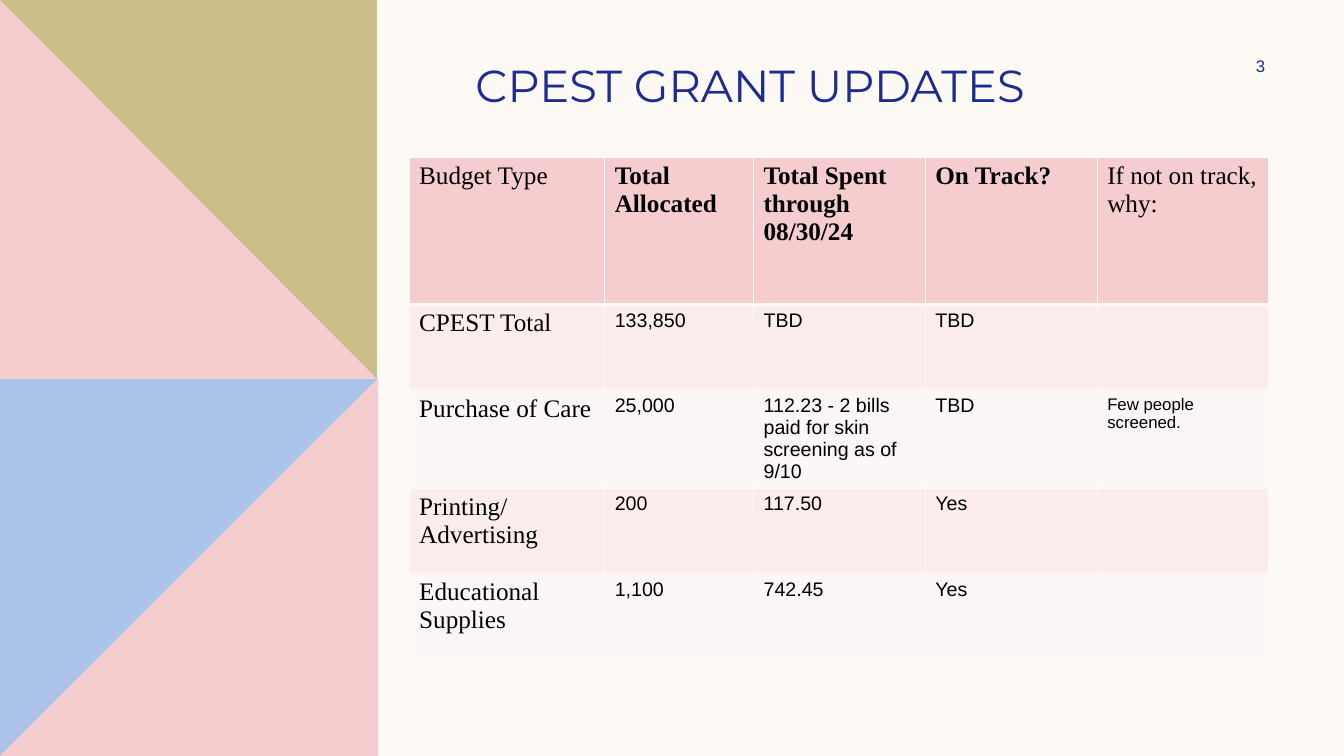
from dataclasses import dataclass

from lxml import etree
from pptx import Presentation
from pptx import util as u
from pptx.dml.color import RGBColor
from pptx.enum import text
from pptx.oxml.ns import qn

CREAM, PINK, OLIVE, BLUE, NAVY = "FDFAF6", "F5CDCE", "CCBE89", "AAC3E8", "1F2C8F"
BANDS = ("FBEDED", "FDF6F6")
SERIF, SANS = "Times New Roman", "Arial"


@dataclass
class Panel:
    colour: str
    points: list[tuple[float, float]]


@dataclass
class Label:
    wording: str
    left: float
    top: float
    width: float
    height: float
    font: str
    size: int
    alignment: text.PP_ALIGN


@dataclass
class CellStyle:
    font: str
    size: int
    bold: bool = False


PANELS = [
    Panel(BLUE, [(0, 9.53), (9.53, 9.53), (9.53, 19.05), (0, 19.05)]),
    Panel(PINK, [(9.53, 9.53), (9.53, 19.05), (0, 19.05)]),
    Panel(OLIVE, [(0, 0), (9.5, 0), (9.5, 9.55), (0, 9.55)]),
    Panel(PINK, [(0, 0), (9.5, 9.55), (0, 9.55)]),
]
LABELS = [
    Label("CPEST GRANT UPDATES", 11.73, 1.27, 19.02, 1.7, "Montserrat", 32, text.PP_ALIGN.LEFT),
    Label("3", 30.4, 1.27, 2.74, 0.76, SANS, 12, text.PP_ALIGN.CENTER),
]
BUDGET = [
    ["Budget Type", "Total Allocated", "Total Spent through 08/30/24", "On Track?",
     "If not on track, why:"],
    ["CPEST Total", "133,850", "TBD", "TBD", ""],
    ["Purchase of Care", "25,000", "112.23 - 2 bills paid for skin screening as of 9/10",
     "TBD", "Few people screened."],
    ["Printing/\nAdvertising", "200", "117.50", "Yes", ""],
    ["Educational Supplies", "1,100", "742.45", "Yes", ""],
]
COLUMN_WIDTHS = [4.93, 3.75, 4.33, 4.33, 4.33]
ROW_HEIGHTS = [3.71, 2.15, 2.15, 2.15, 2.15]


def paint(fill_or_font, colour: str) -> None:
    """Colour a font, or make a fill solid in that colour."""
    if hasattr(fill_or_font, "solid"):
        fill_or_font.solid()
        fill_or_font.fore_color.rgb = RGBColor.from_string(colour)
    else:
        fill_or_font.color.rgb = RGBColor.from_string(colour)


def draw_panel(slide, panel: Panel) -> None:
    start, *others = [(u.Cm(x), u.Cm(y)) for x, y in panel.points]
    builder = slide.shapes.build_freeform(*start)
    builder.add_line_segments(others)
    shape = builder.convert_to_shape()
    shape.shadow.inherit = False
    paint(shape.fill, panel.colour)
    shape.line.fill.background()


def draw_label(slide, label: Label) -> None:
    box = slide.shapes.add_textbox(
        u.Cm(label.left), u.Cm(label.top), u.Cm(label.width), u.Cm(label.height))
    frame = box.text_frame
    frame.word_wrap = True
    frame.vertical_anchor = text.MSO_ANCHOR.MIDDLE
    paragraph = frame.paragraphs[0]
    paragraph.text = label.wording
    paragraph.alignment = label.alignment
    paragraph.font.name, paragraph.font.size = label.font, u.Pt(label.size)
    paint(paragraph.font, NAVY)


def cell_style(row: int, column: int) -> CellStyle:
    if row == 0:
        return CellStyle(SERIF, 18, bold=0 < column < 4)
    if column == 0:
        return CellStyle(SERIF, 18)
    return CellStyle(SANS, 12 if column == 4 else 14)


def add_borders(cell, bottom_width: float) -> None:
    properties = cell._tc.get_or_add_tcPr()
    for side, width in (("L", 1), ("R", 1), ("T", 1), ("B", bottom_width)):
        line = etree.SubElement(properties, qn(f"a:ln{side}"), w=str(u.Pt(width)))
        fill = etree.SubElement(line, qn("a:solidFill"))
        etree.SubElement(fill, qn("a:srgbClr"), val=CREAM)


def draw_budget_table(slide) -> None:
    table = slide.shapes.add_table(
        len(BUDGET), len(COLUMN_WIDTHS), u.Cm(10.31), u.Cm(3.96),
        u.Cm(sum(COLUMN_WIDTHS)), u.Cm(sum(ROW_HEIGHTS))).table
    for column, width in zip(table.columns, COLUMN_WIDTHS):
        column.width = u.Cm(width)
    for table_row, height in zip(table.rows, ROW_HEIGHTS):
        table_row.height = u.Cm(height)
    for row, wordings in enumerate(BUDGET):
        for column, wording in enumerate(wordings):
            cell = table.cell(row, column)
            add_borders(cell, 3 if row == 0 else 1)
            if row == 1:
                cell._tc.tcPr.find(qn("a:lnT")).set("w", str(u.Pt(3)))
            paint(cell.fill, BANDS[(row - 1) % 2] if row else PINK)
            cell.text = wording
            style = cell_style(row, column)
            for paragraph in cell.text_frame.paragraphs:
                font = paragraph.font
                font.name, font.size, font.bold = style.font, u.Pt(style.size), style.bold
                paint(font, "000000")


def main() -> None:
    presentation = Presentation()
    presentation.slide_width, presentation.slide_height = u.Cm(33.87), u.Cm(19.05)
    slide = presentation.slides.add_slide(presentation.slide_layouts[6])
    paint(slide.background.fill, CREAM)
    for panel in PANELS:
        draw_panel(slide, panel)
    draw_budget_table(slide)
    for label in LABELS:
        draw_label(slide, label)
    presentation.save("out.pptx")


if __name__ == "__main__":
    main()
